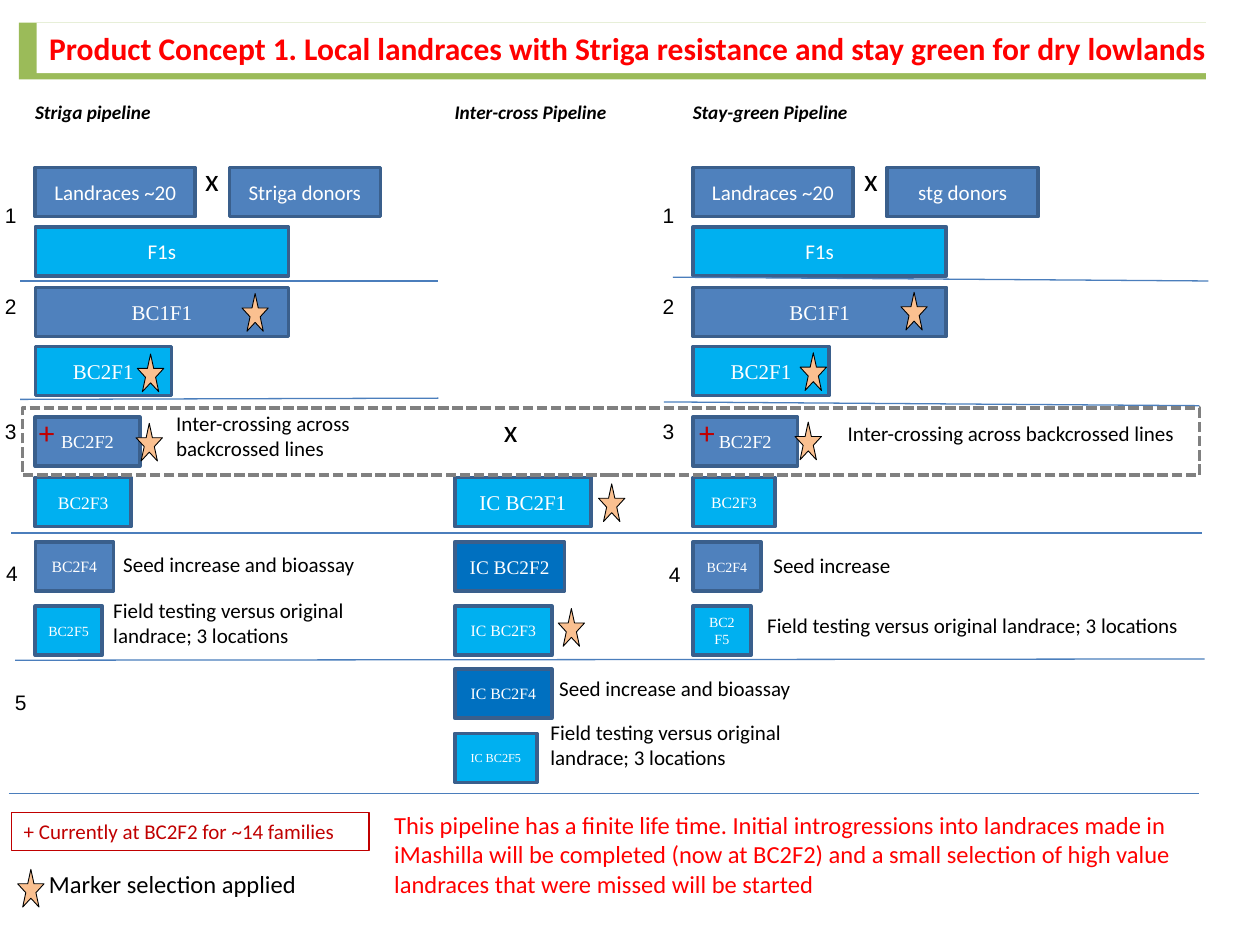
from lxml.etree import SubElement
from pptx import Presentation
from pptx.dml.color import RGBColor as RGB
from pptx.enum.dml import MSO_LINE
from pptx.enum.shapes import MSO_CONNECTOR, MSO_SHAPE as KIND
from pptx.enum.text import MSO_ANCHOR as ANCHOR, MSO_AUTO_SIZE as FIT, PP_ALIGN as ALIGN
from pptx.oxml.ns import qn
from pptx.util import Inches, Pt

WHITE, BLACK = RGB(255, 255, 255), RGB(0, 0, 0)
RED, DARK = RGB(255, 0, 0), RGB(0xC0, 0, 0)
GREEN, PEACH, GREY = RGB(0x9B, 0xBB, 0x59), RGB(0xFA, 0xC0, 0x90), RGB(128, 128, 128)
BLUE, SKY, DEEP = RGB(0x4F, 0x81, 0xBD), RGB(0, 0xB0, 0xF0), RGB(0, 0x70, 0xC0)
EDGE, RULE = RGB(0x3A, 0x5F, 0x8C), RGB(0x4B, 0x7E, 0xBC)
SANS, SERIF, PLAIN = "Calibri", "Times New Roman", "Arial"

TITLE = "Product Concept 1. Local landraces with Striga resistance and stay green for dry lowlands"
CROSS = "Inter-crossing across backcrossed lines"
FIELD = "Field testing versus original landrace; 3 locations"
SEED = "Seed increase and bioassay"
NOTE = ("This pipeline has a finite life time. Initial introgressions into landraces made in "
        "iMashilla will be completed (now at BC2F2) and a small selection of high value "
        "landraces that were missed will be started")

COLS = LEFT, MID, RIGHT = 0.28, 3.61, 5.5
ROWS = 1.33, 1.8, 2.28, 2.75, 3.31, 3.79, 4.3, 4.81, 5.31, 5.82
HIGH = 0.39
HEADS = "Striga pipeline", "Inter-cross Pipeline", "Stay-green Pipeline"

# text, row, width, size, font, fill
COMMON = [
    ("Landraces ~20", 0, 1.27, 12, SANS, BLUE),
    ("F1s", 1, 2.01, 12, SANS, SKY),
    ("BC1F1", 2, 2.01, 12, SERIF, BLUE),
    ("BC2F1", 3, 1.08, 12, SERIF, SKY),
    ("BC2F2", 4, 0.83, 10.5, SERIF, BLUE),
]
STEPS = {
    LEFT: COMMON + [
        ("BC2F3", 5, 0.76, 10, SERIF, SKY),
        ("BC2F4", 6, 0.62, 9, SERIF, BLUE),
        ("BC2F5", 7, 0.53, 8, SERIF, SKY),
    ],
    MID: [
        ("IC BC2F1", 5, 1.08, 12, SERIF, SKY),
        ("IC BC2F2", 6, 0.87, 11, SERIF, DEEP),
        ("IC BC2F3", 7, 0.77, 9, SERIF, SKY),
        ("IC BC2F4", 8, 0.77, 9, SERIF, DEEP),
        ("IC BC2F5", 9, 0.65, 7, SERIF, SKY),
    ],
    RIGHT: COMMON + [
        ("BC2F3", 5, 0.65, 9, SERIF, SKY),
        ("BC2F4", 6, 0.54, 8, SERIF, BLUE),
        ("BC2F5", 7, 0.46, 8, SERIF, SKY),
    ],
}
DONORS = {LEFT: "Striga donors", RIGHT: "stg donors"}
YEARS = [("1", 1.56), ("2", 2.28), ("3", 3.27)]
LATE = [("4", -0.05, 4.4), ("4", 5.21, 4.41), ("5", 0.02, 5.42)]
LABELS = [
    (CROSS, 1.3, 3.21, 1.99), (CROSS, 6.63, 3.29, 3.24),
    (SEED, 0.88, 4.33, 2.34), ("Seed increase", 6.04, 4.34, 2.34), (SEED, 4.34, 5.31, 2.34),
    (FIELD, 0.8, 4.69, 2.61), (FIELD, 5.99, 4.81, 4.11), (FIELD, 4.27, 5.66, 2.61),
]
SIGNS = [("x", 1.53, 1.22, BLACK), ("x", 6.76, 1.22, BLACK), ("x", 3.9, 3.21, BLACK),
         ("+", 0.21, 3.23, DARK), ("+", 5.45, 3.23, DARK)]
STARS = [(1.92, 2.33), (7.15, 2.32), (1.09, 2.81), (6.35, 2.8), (1.08, 3.36),
         (6.31, 3.35), (4.75, 3.84), (4.43, 4.83), (0.14, 6.9)]
LINES = [(0.16, 2.23, 3.48, 2.23), (5.34, 2.2, 9.59, 2.23), (0.16, 3.17, 3.48, 3.16),
         (5.27, 3.19, 9.52, 3.22), (0.09, 4.23, 9.54, 4.23), (0.12, 5.24, 9.56, 5.23),
         (0.07, 6.3, 9.52, 6.3)]

deck = Presentation()
deck.slide_width, deck.slide_height = Inches(10), Inches(7.5)
page = deck.slides.add_slide(deck.slide_layouts[5])


def write(shape, text, size, name, color, align=ALIGN.LEFT, bold=False, italic=False):
    """Put one styled paragraph into a shape."""
    para = shape.text_frame.paragraphs[0]
    para.text, para.alignment = text, align
    font = para.font
    font.size, font.name, font.color.rgb = Pt(size), name, color
    font.bold, font.italic = bold, italic


def draw(kind, x, y, w, h, fill=None, edge=None, width=2):
    """Add a flat preset shape."""
    shape = page.shapes.add_shape(kind, *map(Inches, (x, y, w, h)))
    shape.shadow.inherit = False
    if fill is None:
        shape.fill.background()
    else:
        shape.fill.solid()
        shape.fill.fore_color.rgb = fill
    if edge is None:
        shape.line.fill.background()
    else:
        shape.line.color.rgb, shape.line.width = edge, Pt(width)
    return shape


def label(text, x, y, w, h=0.3, size=12, name=SANS, color=BLACK, wrap=True, **style):
    """Add a text box."""
    box = page.shapes.add_textbox(*map(Inches, (x, y, w, h)))
    box.text_frame.word_wrap = wrap
    write(box, text, size, name, color, **style)


def step(text, x, y, w, size, name, fill):
    """Add one breeding step."""
    kind = KIND.RECTANGLE if y == ROWS[0] else KIND.FLOWCHART_PROCESS
    write(draw(kind, x, y, w, HIGH, fill, EDGE), text, size, name, WHITE, ALIGN.CENTER)


title = page.shapes.title
title.left, title.top, title.width, title.height = map(Inches, (0.29, 0.18, 9.45, 0.4))
title.fill.solid()
title.fill.fore_color.rgb = WHITE
title.text_frame.auto_size = FIT.NONE
title.text_frame.vertical_anchor = ANCHOR.TOP
write(title, TITLE, 18, SANS, RED, bold=True)
title.element.addprevious(draw(KIND.RECTANGLE, 0.15, 0.18, 9.42, 0.45, GREEN).element)

for x, head in zip(COLS, HEADS):
    label(head, x - 0.1, 0.75, 2.73, size=11, bold=True, italic=True)
    for text, row, w, size, name, fill in STEPS[x]:
        step(text, x, ROWS[row], w, size, name, fill)
for x, text in DONORS.items():
    step(text, x + 1.54, ROWS[0], 1.2, 12, SANS, BLUE)
    for year, y in YEARS:
        label(year, x - 0.34, y, 0.29, name=PLAIN, wrap=False)
for year, x, y in LATE:
    label(year, x, y, 0.29, name=PLAIN, wrap=False)

for x, y, right, low in LINES:
    rule = page.shapes.add_connector(MSO_CONNECTOR.STRAIGHT, *map(Inches, (x, y, right, low)))
    rule.line.color.rgb, rule.line.width = RULE, Pt(0.75)
    SubElement(rule.element.spPr, qn("a:effectLst"))

frame = draw(KIND.RECTANGLE, 0.18, 3.24, 9.34, 0.53, edge=GREY)
frame.line.dash_style = MSO_LINE.SQUARE_DOT
for text, x, y, w in LABELS:
    label(text, x, y, w, 0.5 if w < 2.7 and text in (CROSS, FIELD) else 0.3)
for text, x, y, color in SIGNS:
    label(text, x, y, 0.39 if text == "x" else 0.27, 0.4, 18, color=color)
for x, y in STARS:
    draw(KIND.STAR_5_POINT, x, y, 0.21, 0.3, PEACH, BLACK, 0.5)

key = draw(KIND.RECTANGLE, 0.09, 6.45, 2.84, 0.3, edge=DARK, width=0.75)
write(key, "+ Currently at BC2F2 for ~14 families", 12, SANS, DARK)
label("Marker selection applied", 0.29, 6.85, 2.96, 0.34, 14)
label(NOTE, 3.03, 6.38, 6.49, 0.81, 14, color=RED)

deck.save("out.pptx")
